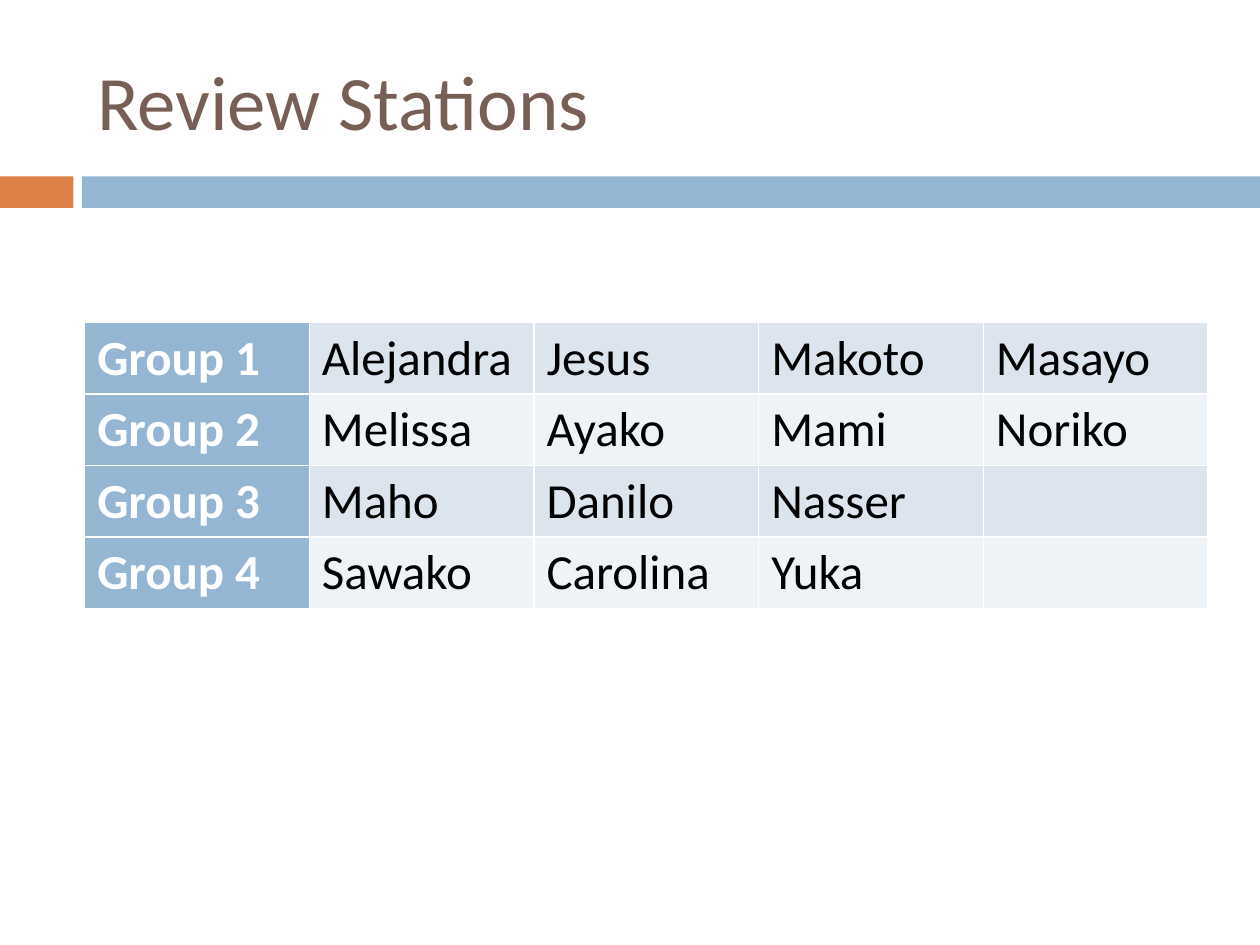
from lxml.etree import SubElement
from pptx import Presentation
from pptx.dml.color import RGBColor
from pptx.enum.shapes import MSO_SHAPE
from pptx.enum.text import MSO_ANCHOR
from pptx.oxml.ns import qn
from pptx.util import Pt

ORANGE, BLUE, BROWN = "DD8047", "94B6D2", "775F55"
WHITE, BLACK = "FFFFFF", "000000"
BANDS = ("DCE5EE", "EEF3F7")
GROUPS = {
    "Group 1": ["Alejandra", "Jesus", "Makoto", "Masayo"],
    "Group 2": ["Melissa", "Ayako", "Mami", "Noriko"],
    "Group 3": ["Maho", "Danilo", "Nasser", ""],
    "Group 4": ["Sawako", "Carolina", "Yuka", ""],
}


def paint(target, color):
    target.solid()
    target.fore_color.rgb = RGBColor.from_string(color)


def write(frame, text, size=28, color=BLACK, bold=False, font="Calibri"):
    run = frame.paragraphs[0].add_run()
    run.text = text
    run.font.name = font
    run.font.size = Pt(size)
    run.font.bold = bold
    paint(run.font.fill, color)


class StationSlide:
    """Draws the parts of one slide in a shared style."""

    def __init__(self, slide, border=WHITE, border_width=1):
        self.shapes = slide.shapes
        self.border = border
        self.border_width = border_width

    def bar(self, left, top, width, height, color):
        bar = self.shapes.add_shape(
            MSO_SHAPE.RECTANGLE, Pt(left), Pt(top), Pt(width), Pt(height))
        bar.shadow.inherit = False
        bar.line.fill.background()
        paint(bar.fill, color)

    def title(self, text, left, top, width, height):
        frame = self.shapes.add_textbox(
            Pt(left), Pt(top), Pt(width), Pt(height)).text_frame
        frame.word_wrap = True
        frame.vertical_anchor = MSO_ANCHOR.MIDDLE
        write(frame, text, size=44, color=BROWN)

    def cell(self, cell, text, fill, **style):
        properties = cell._tc.get_or_add_tcPr()
        for side in ("a:lnL", "a:lnR", "a:lnT", "a:lnB"):
            line = SubElement(properties, qn(side), w=str(Pt(self.border_width)))
            solid = SubElement(line, qn("a:solidFill"))
            SubElement(solid, qn("a:srgbClr"), val=self.border)
        paint(cell.fill, fill)
        if text:
            write(cell.text_frame, text, **style)

    def group_table(self, groups, left, top, width, height):
        columns = 1 + max(len(members) for members in groups.values())
        table = self.shapes.add_table(
            len(groups), columns, Pt(left), Pt(top), Pt(width), Pt(height)).table
        table.first_row = False
        table.first_col = True
        for row, (group, members) in enumerate(groups.items()):
            self.cell(table.cell(row, 0), group, BLUE, color=WHITE, bold=True)
            for column, member in enumerate(members, 1):
                self.cell(table.cell(row, column), member, BANDS[row % 2])


def main():
    deck = Presentation()
    deck.slide_width, deck.slide_height = Pt(720), Pt(540)
    stations = StationSlide(deck.slides.add_slide(deck.slide_layouts[6]))
    stations.bar(0, 100.8, 42, 18, ORANGE)
    stations.bar(46.8, 100.8, 673.2, 18, BLUE)
    stations.title("Review Stations", 48.4, 18, 642, 78)
    stations.group_table(GROUPS, 48.4, 184.3, 642, 163.4)
    deck.save("out.pptx")


if __name__ == "__main__":
    main()
